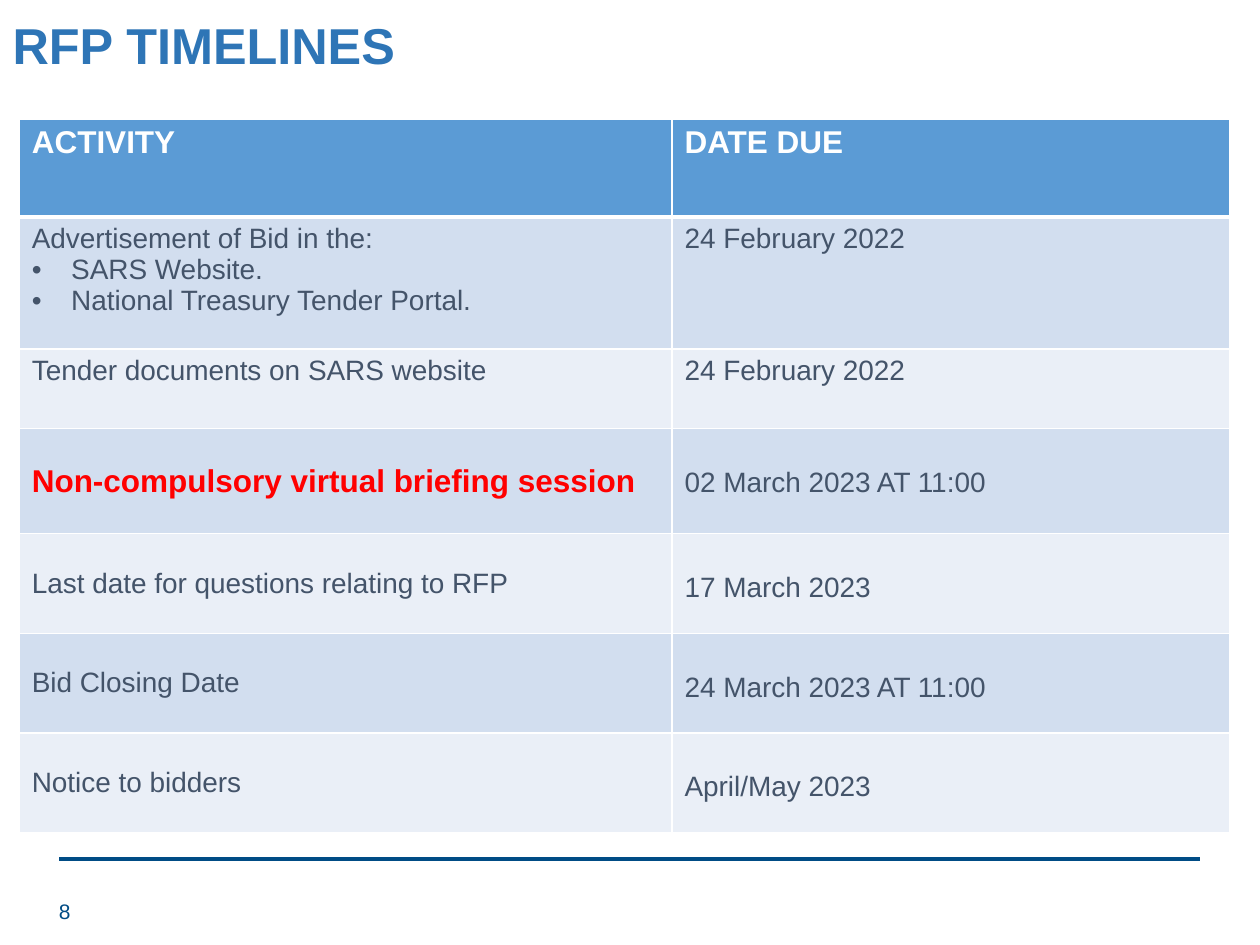
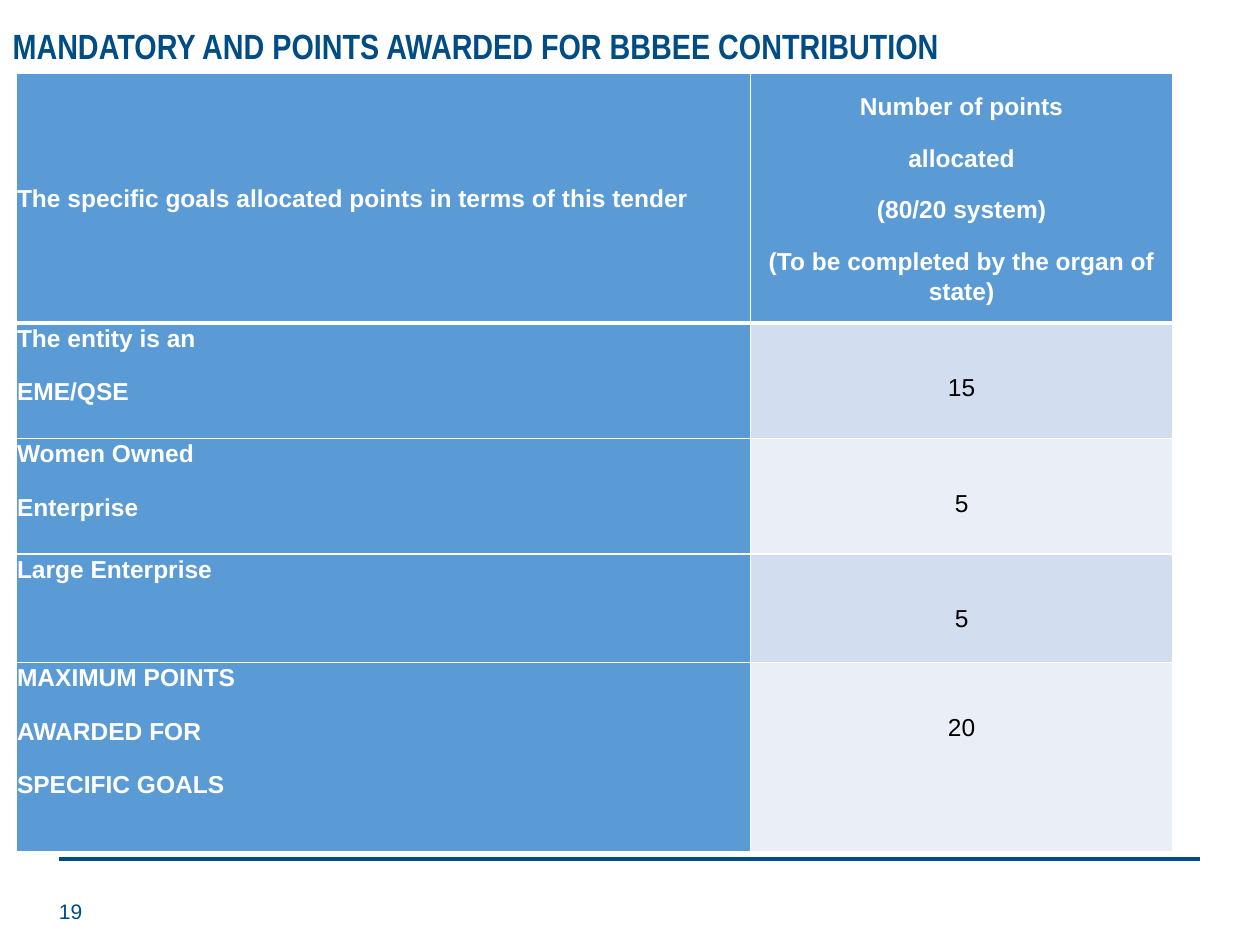
"""Build the tender briefing slides: RFP timelines and points awarded."""
from lxml.etree import SubElement
from pptx import Presentation
from pptx.dml.color import RGBColor
from pptx.enum.shapes import MSO_CONNECTOR
from pptx.enum.text import MSO_ANCHOR, MSO_AUTO_SIZE, PP_ALIGN
from pptx.oxml.ns import qn
from pptx.util import Pt

NAVY = RGBColor(0x00, 0x4C, 0x85)
TITLE_BLUE = RGBColor(0x2E, 0x75, 0xB6)
HEADER_BLUE = RGBColor(0x5B, 0x9B, 0xD5)
BANDS = (RGBColor(0xD2, 0xDE, 0xEF), RGBColor(0xEA, 0xEF, 0xF7))
SLATE = RGBColor(0x44, 0x54, 0x6A)
RED = RGBColor(0xFF, 0x00, 0x00)
WHITE = RGBColor(0xFF, 0xFF, 0xFF)
BLACK = RGBColor(0x00, 0x00, 0x00)

BULLET = "•"


def font_format(size, color, bold=False, name="Arial"):
    return {"size": Pt(size), "color": color, "bold": bold, "name": name}


def set_attributes(target, values):
    for name, value in values.items():
        setattr(target, name, value)


class DeckBuilder:
    def __init__(self):
        self.presentation = Presentation()
        self.presentation.slide_width = Pt(720)
        self.presentation.slide_height = Pt(540)
        self.slide = None

    def start_slide(self, title, box, font, paragraph_format, number):
        layout = self.presentation.slide_layouts[5]
        self.slide = self.presentation.slides.add_slide(layout)
        self.footer(number)
        shape = self.slide.shapes.title
        for name, value in zip(("left", "top", "width", "height"), box):
            setattr(shape, name, Pt(value))
        set_attributes(shape.text_frame, {
            "word_wrap": True, "auto_size": MSO_AUTO_SIZE.NONE,
            "vertical_anchor": MSO_ANCHOR.TOP})
        self.add_text(shape.text_frame, [title], font,
                      {"line_spacing": 0.9, **paragraph_format})

    def footer(self, number):
        line = self.slide.shapes.add_connector(
            MSO_CONNECTOR.STRAIGHT, Pt(34), Pt(491), Pt(686), Pt(491))
        line.line.color.rgb = NAVY
        line.line.width = Pt(2)
        SubElement(line._element.spPr, qn("a:effectLst"))
        shape = self.slide.shapes.add_textbox(
            Pt(26.6), Pt(506), Pt(162), Pt(29))
        set_attributes(shape.text_frame, {
            "word_wrap": True, "vertical_anchor": MSO_ANCHOR.MIDDLE})
        self.add_text(shape.text_frame, [str(number)], font_format(12, NAVY))

    def add_text(self, text_frame, lines, font, paragraph_format=None, gap=0):
        for index, text in enumerate(lines):
            paragraph = (text_frame.add_paragraph() if index
                         else text_frame.paragraphs[0])
            set_attributes(paragraph, {
                "alignment": PP_ALIGN.LEFT, **(paragraph_format or {})})
            if index and gap:
                paragraph.space_before = Pt(gap)
            if text.startswith(BULLET):
                self.bullet(paragraph)
            run = paragraph.add_run()
            run.text = text.removeprefix(BULLET)
            set_attributes(run.font, {
                name: value for name, value in font.items() if name != "color"})
            run.font.color.rgb = font["color"]

    def bullet(self, paragraph):
        properties = paragraph._p.get_or_add_pPr()
        properties.set("marL", str(Pt(22.5)))
        properties.set("indent", str(-Pt(22.5)))
        SubElement(properties, qn("a:buFont"), typeface="Arial")
        SubElement(properties, qn("a:buChar"), char=BULLET)

    def borders(self, cell, widths):
        properties = cell._tc.get_or_add_tcPr()
        for side, width in zip("LRTB", widths):
            line = SubElement(properties, qn(f"a:ln{side}"), w=str(Pt(width)))
            fill = SubElement(line, qn("a:solidFill"))
            SubElement(fill, qn("a:srgbClr"), val=str(WHITE))

    def table(self, left, top, widths, heights, rows):
        frame = self.slide.shapes.add_table(
            len(heights), len(widths), Pt(left), Pt(top),
            Pt(sum(widths)), Pt(sum(heights)))
        table = frame.table
        set_attributes(table, {"first_row": False, "horz_banding": False})
        for column, width in zip(table.columns, widths):
            column.width = Pt(width)
        for index, (row, height) in enumerate(zip(table.rows, heights)):
            row.height = Pt(height)
            band = BANDS[(index - 1) % 2] if index else HEADER_BLUE
            edges = (1, 1, 3 if index == 1 else 1, 1 if index else 3)
            for cell, (lines, style) in zip(row.cells, rows[index]):
                self.borders(cell, edges)
                cell.fill.solid()
                cell.fill.fore_color.rgb = style.get("fill", band)
                set_attributes(cell, style.get("cell", {}))
                self.add_text(cell.text_frame, lines, style["font"],
                              style.get("paragraph"), style.get("gap", 0))


def add_timelines(deck):
    deck.start_slide("RFP TIMELINES", (0, 8.6, 620.6, 41.8),
                     font_format(28.8, TITLE_BLUE, True),
                     {"alignment": PP_ALIGN.LEFT}, 8)
    middle = {"vertical_anchor": MSO_ANCHOR.MIDDLE}
    header = {"font": font_format(18, WHITE, True)}
    plain = {"font": font_format(16, SLATE)}
    centred = {**plain, "cell": middle}
    lowered = {**plain, "cell": {"margin_top": Pt(22)}}
    briefing = {"font": font_format(18, RED, True), "cell": middle}
    rows = [
        [(["ACTIVITY"], header), (["DATE DUE"], header)],
        [(["Advertisement of Bid in the:", "•SARS Website.",
           "•National Treasury Tender Portal."], plain),
         (["24 February 2022"], plain)],
        [(["Tender documents on SARS website"], plain),
         (["24 February 2022"], plain)],
        [(["Non-compulsory virtual briefing session"], briefing),
         (["02 March 2023 AT 11:00"], lowered)],
    ]
    rows += [[([activity], centred), ([date], lowered)] for activity, date in (
        ("Last date for questions relating to RFP", "17 March 2023"),
        ("Bid Closing Date", "24 March 2023 AT 11:00"),
        ("Notice to bidders", "April/May 2023"))]
    deck.table(11, 68, (373, 319), (56, 75.5, 45.5, 60, 57, 57, 57), rows)


def add_points(deck):
    deck.start_slide("MANDATORY AND POINTS AWARDED FOR BBBEE CONTRIBUTION",
                     (0, 13, 708.5, 48),
                     font_format(20, NAVY, True, "Arial Narrow"),
                     {"alignment": PP_ALIGN.JUSTIFY}, 19)
    margins = {"margin_left": Pt(0.72), "margin_right": Pt(0.72),
               "margin_top": Pt(0), "margin_bottom": Pt(0)}
    spacing = {"line_spacing": 1.07, "space_after": Pt(8)}
    goal = {"font": font_format(14, WHITE, True), "fill": HEADER_BLUE,
            "cell": margins, "paragraph": spacing, "gap": 5.8}
    header = {**goal, "gap": 4.8,
              "cell": {**margins, "vertical_anchor": MSO_ANCHOR.MIDDLE}}
    centred_header = {**header,
                      "paragraph": {**spacing, "alignment": PP_ALIGN.CENTER}}
    points = {"font": font_format(14, BLACK),
              "cell": {**margins, "margin_top": Pt(29.5)},
              "paragraph": {"alignment": PP_ALIGN.CENTER}}
    rows = [[
        (["The specific goals allocated points in terms of this tender"],
         header),
        (["Number of points", "allocated", "(80/20 system)",
          "(To be completed by the organ of state)"], centred_header)]]
    rows += [[(lines, goal), ([value], points)] for lines, value in (
        (["The entity is an", "EME/QSE"], "15"),
        (["Women Owned", "Enterprise"], "5"),
        (["Large Enterprise"], "5"),
        (["MAXIMUM POINTS", "AWARDED FOR", "SPECIFIC GOALS"], "20"))]
    deck.table(9, 42, (420, 241), (142.5, 66, 66, 62, 108.5), rows)


def main():
    deck = DeckBuilder()
    add_timelines(deck)
    add_points(deck)
    deck.presentation.save("out.pptx")


if __name__ == "__main__":
    main()
